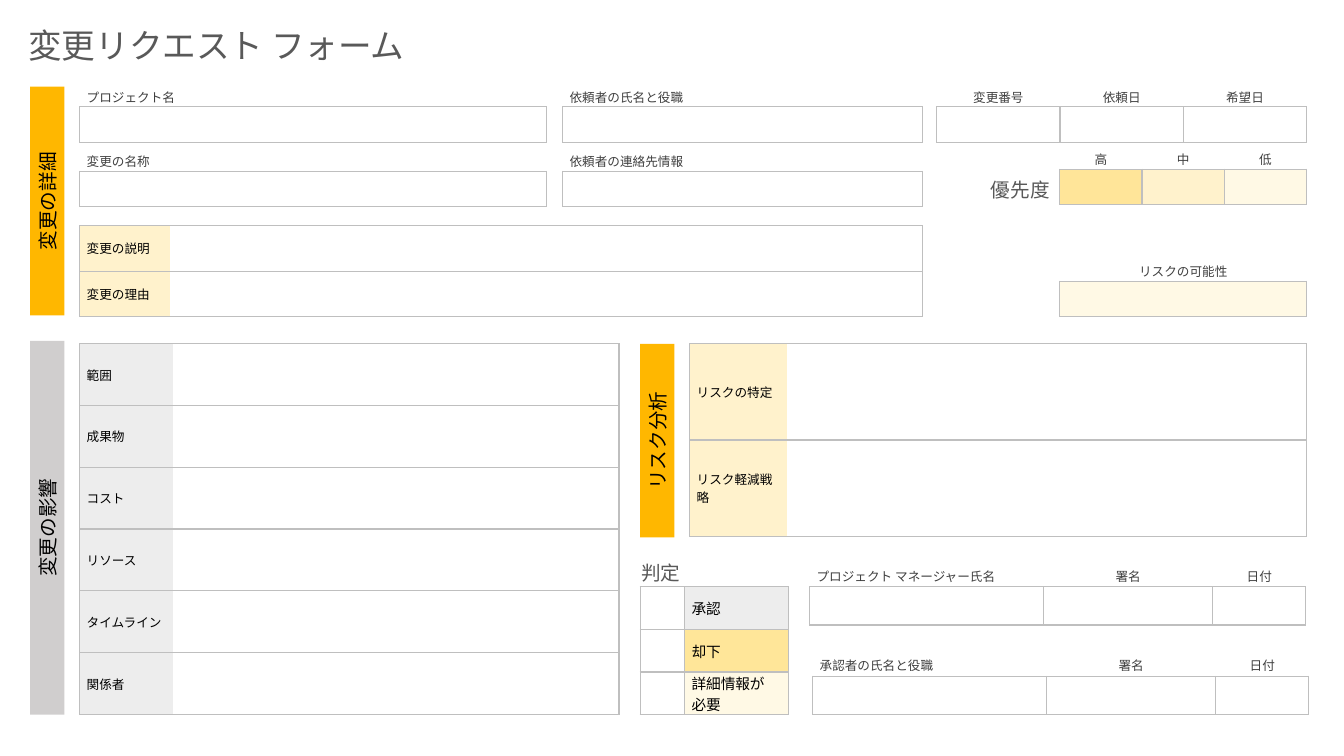
from lxml.etree import SubElement
from pptx import Presentation
from pptx.dml.color import RGBColor
from pptx.enum.shapes import MSO_SHAPE
from pptx.enum.text import MSO_ANCHOR, PP_ALIGN
from pptx.oxml.ns import qn
from pptx.util import Inches, Pt

COLORS = {
    "white": "FFFFFF", "border": "BFBFBF", "heading": "595959", "caption": "404040",
    "black": "000000", "amber": "FFB700", "silver": "D0CECE", "gray": "EDEDED",
    "high": "FFE599", "rejected": "FFE699", "medium": "FFF2CC", "low": "FFF9E5",
}


def color(name):
    """Return the named colour of the form."""
    return RGBColor.from_string(COLORS[name])


def apply_format(target, values):
    """Set every attribute in values on target."""
    for name, value in values.items():
        setattr(target, name, value)


class FormPage:
    """Draws the parts of a form on one slide in one style."""

    font_name = "League Spartan"

    def __init__(self, deck):
        """Add a title-only page to the deck."""
        self.page = deck.slides.add_slide(deck.slide_layouts[5])

    def set_text(self, frame, text, size, tint, **paragraph_format):
        """Put one styled paragraph into a text frame."""
        para = frame.paragraphs[0]
        para.text = text
        apply_format(para, paragraph_format)
        for span in para.runs:
            apply_format(span.font, {"name": self.font_name, "size": Pt(size)})
            span.font.color.rgb = color(tint)

    def title(self, text, left, top, width, height):
        """Place the page title."""
        box = self.page.shapes.title
        apply_format(box, {"left": Inches(left), "top": Inches(top),
                           "width": Inches(width), "height": Inches(height)})
        box.text_frame.vertical_anchor = MSO_ANCHOR.TOP
        self.set_text(box.text_frame, text, 24, "heading", alignment=PP_ALIGN.LEFT)

    def label(self, text, left, top, width, alignment):
        """Add a free-standing label."""
        box = self.page.shapes.add_textbox(*map(Inches, (left, top, width, 0.35)))
        box.text_frame.word_wrap = True
        self.set_text(box.text_frame, text, 14, "heading",
                      alignment=alignment, line_spacing=1.15)

    def tab(self, text, left, top, length, fill):
        """Add a section tab that reads upwards."""
        thick = 0.34
        shift = (length - thick) / 2
        box = self.page.shapes.add_shape(
            MSO_SHAPE.RECTANGLE, *map(Inches, (left - shift, top + shift, length, thick)))
        box.rotation = 270
        box.shadow.inherit = False
        box.fill.solid()
        box.fill.fore_color.rgb = color(fill)
        box.line.fill.background()
        box.text_frame.vertical_anchor = MSO_ANCHOR.MIDDLE
        self.set_text(box.text_frame, text, 14, "black", alignment=PP_ALIGN.CENTER)

    def table(self, left, top, widths, heights):
        """Add an unbanded table with the given column widths and row heights."""
        frame = self.page.shapes.add_table(
            len(heights), len(widths),
            *map(Inches, (left, top, sum(widths), sum(heights))))
        table = frame.table
        apply_format(table, {"first_row": False, "horz_banding": False})
        for column, width in zip(table.columns, widths):
            column.width = Inches(width)
        for row, height in zip(table.rows, heights):
            row.height = Inches(height)
        return table

    def cell(self, cell, fill, text="", size=9, tint="black",
             alignment=PP_ALIGN.LEFT, **borders):
        """Style a cell; a border given as None is not drawn."""
        apply_format(cell, {"margin_left": Inches(0.07), "margin_right": Inches(0.07),
                            "margin_top": 0, "margin_bottom": 0,
                            "vertical_anchor": MSO_ANCHOR.MIDDLE})
        properties = cell._tc.get_or_add_tcPr()
        for side in "LRTB":
            name = borders.get(side, "border")
            line = SubElement(properties, qn(f"a:ln{side}"), w=str(Pt(1)))
            if name:
                solid = SubElement(line, qn("a:solidFill"))
                SubElement(solid, qn("a:srgbClr"), val=COLORS[name])
            else:
                SubElement(line, qn("a:noFill"))
        cell.fill.solid()
        cell.fill.fore_color.rgb = color(fill)
        self.set_text(cell.text_frame, text, size, tint, alignment=alignment)
        if not text:
            SubElement(cell.text_frame.paragraphs[0]._p, qn("a:endParaRPr"), sz="900")

    def fields(self, left, top, captions, widths, heights=(0.2, 0.35),
               fills=None, centered_from=0):
        """Add a row of entry boxes with captions above them."""
        table = self.table(left, top, widths, heights)
        fills = fills or ["white"] * len(captions)
        for index, (caption, fill) in enumerate(zip(captions, fills)):
            alignment = PP_ALIGN.CENTER if index >= centered_from else PP_ALIGN.LEFT
            self.cell(table.cell(0, index), "white", caption, tint="caption",
                      alignment=alignment, L="white", R="white", T="white")
            self.cell(table.cell(1, index), fill)

    def ledger(self, left, top, captions, widths, height, fill):
        """Add equal rows with a shaded caption and an entry area."""
        table = self.table(left, top, widths, [height / len(captions)] * len(captions))
        for index, caption in enumerate(captions):
            self.cell(table.cell(index, 0), fill, caption, R=None)
            self.cell(table.cell(index, 1), "white", L=None)

    def decisions(self, left, top, options, widths, height):
        """Add a list of tick boxes with shaded options."""
        table = self.table(left, top, widths, [height / len(options)] * len(options))
        for index, (option, fill) in enumerate(options):
            self.cell(table.cell(index, 0), "white")
            self.cell(table.cell(index, 1), fill, option, size=10.5)


def main():
    """Build the change request form."""
    deck = Presentation()
    apply_format(deck, {"slide_width": Inches(13.33), "slide_height": Inches(7.5)})
    form = FormPage(deck)
    form.title("変更リクエスト フォーム", 0.18, 0.2, 9.13, 0.5)

    form.tab("変更の詳細", 0.3, 0.86, 2.27, "amber")
    details = [(0.79, 4.63, ("プロジェクト名", "変更の名称")),
               (5.58, 3.57, ("依頼者の氏名と役職", "依頼者の連絡先情報"))]
    for left, width, captions in details:
        for top, caption in zip((0.86, 1.5), captions):
            form.fields(left, top, [caption], [width], centered_from=1)
    form.fields(9.29, 0.86, ["変更番号", "依頼日", "希望日"], [3.67 / 3] * 3)
    form.label("優先度", 9.29, 1.68, 1.22, PP_ALIGN.RIGHT)
    form.fields(10.51, 1.48, ["高", "中", "低"], [2.45 / 3] * 3,
                fills=["high", "medium", "low"])
    form.ledger(0.79, 2.24, ["変更の説明", "変更の理由"], [0.9, 7.46], 0.9, "medium")
    form.fields(10.51, 2.59, ["リスクの可能性"], [2.45], fills=["low"])

    form.tab("変更の影響", 0.3, 3.38, 3.71, "silver")
    impacts = ["範囲", "成果物", "コスト", "リソース", "タイムライン", "関係者"]
    form.ledger(0.79, 3.41, impacts, [0.93, 4.42], 3.68, "gray")

    form.tab("リスク分析", 6.35, 3.41, 1.92, "amber")
    form.ledger(6.84, 3.41, ["リスクの特定", "リスク軽減戦略"], [0.97, 5.15], 1.91, "medium")

    form.label("判定", 6.26, 5.48, 1.65, PP_ALIGN.LEFT)
    options = [("承認", "gray"), ("却下", "rejected"), ("詳細情報が\n必要", "low")]
    form.decisions(6.35, 5.82, options, [0.44, 1.03], 1.27)
    signers = [(8.03, 5.6, "プロジェクト マネージャー氏名"), (8.06, 6.49, "承認者の氏名と役職")]
    for left, top, signer in signers:
        form.fields(left, top, [signer, "署名", "日付"], [2.32, 1.68, 0.92],
                    heights=(0.22, 0.38), centered_from=1)
    deck.save("out.pptx")


if __name__ == "__main__":
    main()
